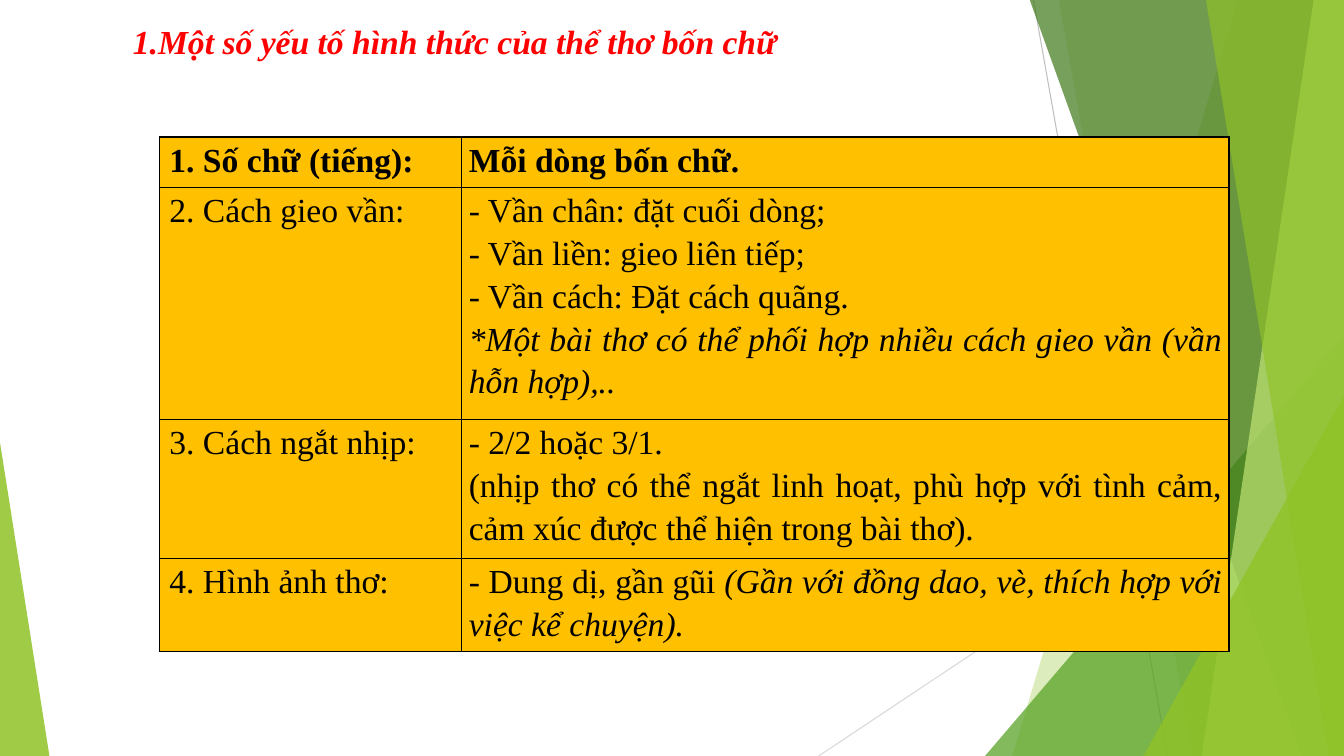
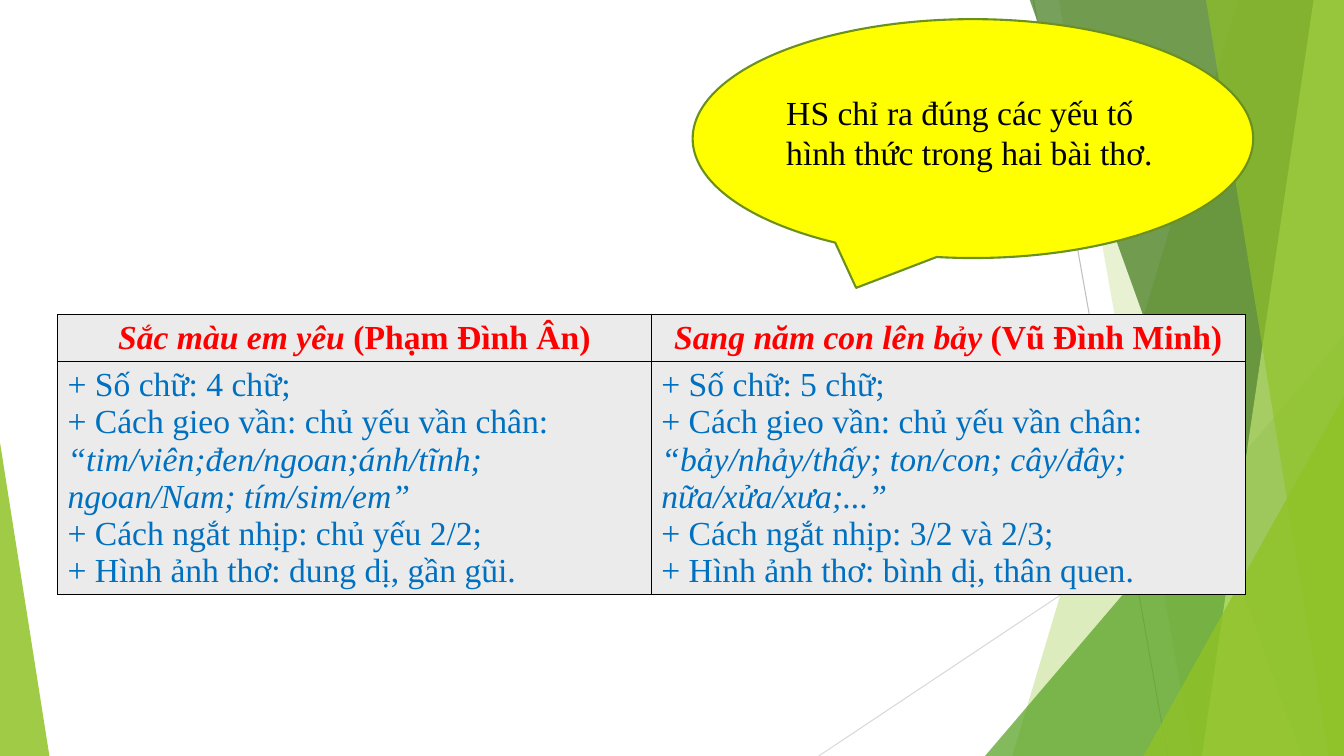
from lxml import etree
from pptx import Presentation
from pptx.dml.color import RGBColor
from pptx.enum.shapes import MSO_CONNECTOR, MSO_SHAPE
from pptx.enum.text import PP_ALIGN
from pptx.oxml import parse_xml
from pptx.oxml.ns import nsdecls, qn
from pptx.util import Inches, Pt

LINE = MSO_CONNECTOR.STRAIGHT
TRIANGLE = MSO_SHAPE.RIGHT_TRIANGLE
TRIANGLE = MSO_SHAPE.ISOSCELES_TRIANGLE
BUBBLE = MSO_SHAPE.OVAL_CALLOUT
LEFT, CENTER, JUSTIFY = PP_ALIGN.LEFT, PP_ALIGN.CENTER, PP_ALIGN.JUSTIFY

FONT = "Times New Roman"
BLACK = RGBColor(0x00, 0x00, 0x00)
RED = RGBColor(0xFF, 0x00, 0x00)
BLUE = RGBColor(0x00, 0x70, 0xC0)
GOLD = RGBColor(0xFF, 0xC0, 0x00)
SILVER = RGBColor(0xEB, 0xEB, 0xEB)
YELLOW = RGBColor(0xFF, 0xFF, 0x00)
OLIVE = RGBColor(0x6B, 0x90, 0x1C)
LIME = RGBColor(0x90, 0xC2, 0x26)
GREEN = RGBColor(0x54, 0xA0, 0x21)
FOREST = RGBColor(0x3F, 0x78, 0x19)
PALE = RGBColor(0xC0, 0xE4, 0x74)
GREY = RGBColor(0xBF, 0xBF, 0xBF)
MIST = RGBColor(0xD9, 0xD9, 0xD9)

WIDE, HIGH, TOP = 13.33, 7.5, -0.01

RAYS = [(10.25, 0, 11.58, HIGH, GREY), (WIDE, 4.03, 8.12, HIGH, MIST)]
PANES = [
    ((12.28, 10.04), LIME, 30),
    ((10.5, 11.83), LIME, 20),
    ((9.77, 3.33, 3.56, 1), GREEN, 72),
    ((10.21, 12.91), FOREST, 70),
    ((13.03, 11.92), PALE, 70),
    ((11.96, 13.18), LIME, 65),
    ((11.34, 3.93, 1.99, 1), LIME, 80),
    ((0, 4.39, 0.49, 0), LIME, 85),
]


def write(frame, text, color=BLACK, bold=False, align=LEFT, space=None):
    frame.word_wrap = True
    for i, line in enumerate(text.split("\n")):
        para = frame.paragraphs[0] if i == 0 else frame.add_paragraph()
        para.alignment = align
        para.line_spacing = space
        for j, part in enumerate(line.split("|")):
            if part:
                run = para.add_run()
                run.text = part
                font = run.font
                font.name, font.size = FONT, Pt(24)
                font.bold, font.italic = bold, j % 2 == 1
                font.color.rgb = color


def add_grid(slide, left, top, cols, rows, fill):
    table = slide.shapes.add_table(
        len(rows), len(cols), Inches(left), Inches(top),
        Inches(sum(cols)), Inches(sum(rows))).table
    table.first_row = table.horz_banding = False
    for col, width in zip(table.columns, cols):
        col.width = Inches(width)
    for row, height in zip(table.rows, rows):
        row.height = Inches(height)
    for cell in table.iter_cells():
        props = cell._tc.get_or_add_tcPr()
        for side in "LRTB":
            props.append(parse_xml(
                f'<a:ln{side} {nsdecls("a")} w="12700"><a:solidFill>'
                f'<a:srgbClr val="{BLACK}"/></a:solidFill></a:ln{side}>'))
        cell.fill.solid()
        cell.fill.fore_color.rgb = fill
    return table


deck = Presentation()
deck.slide_width, deck.slide_height = Inches(WIDE), Inches(HIGH)
form, pair = [deck.slides.add_slide(deck.slide_layouts[6]) for _ in range(2)]

for slide in (form, pair):
    shapes = slide.shapes
    for x1, y1, x2, y2, color in RAYS:
        ray = shapes.add_connector(
            LINE, Inches(x1), Inches(y1), Inches(x2), Inches(y2))
        ray.line.color.rgb = color
        ray.line.width = Pt(0.75)
        etree.SubElement(ray._element.spPr, qn("a:effectLst"))
    for place, color, alpha in PANES:
        if len(place) == 2:
            head, foot = place
            path = shapes.build_freeform(Inches(head), Inches(TOP))
            path.add_line_segments(
                [(Inches(x), Inches(y)) for x, y in
                 [(WIDE, TOP), (WIDE, HIGH), (foot, HIGH)]])
            pane = path.convert_to_shape()
        else:
            left, top, width, tip = place
            pane = shapes.add_shape(
                TRIANGLE, Inches(left), Inches(top),
                Inches(width), Inches(HIGH - top))
            pane.adjustments[0] = tip
        pane.shadow.inherit = False
        pane.line.fill.background()
        pane.fill.solid()
        pane.fill.fore_color.rgb = color
        tint = pane._element.spPr.find(qn("a:solidFill"))[0]
        etree.SubElement(tint, qn("a:alpha"), val=str(alpha * 1000))

title = form.shapes.add_textbox(
    Inches(1.22), Inches(0.16), Inches(8.23), Inches(0.5))
write(title.text_frame, "|1.Một số yếu tố hình thức của thể thơ bốn chữ|",
      color=RED, bold=True)

TRAITS = [
    ("1. Số chữ (tiếng):", "Mỗi dòng bốn chữ."),
    ("2. Cách gieo vần:",
     "- Vần chân: đặt cuối dòng;\n"
     "- Vần liền: gieo liên tiếp;\n"
     "- Vần cách: Đặt cách quãng.\n"
     "|*Một bài thơ có thể phối hợp nhiều cách gieo vần (vần hỗn hợp),..|"),
    ("3. Cách ngắt nhịp:",
     "- 2/2 hoặc 3/1.\n"
     "(nhịp thơ có thể ngắt linh hoạt, phù hợp với tình cảm, "
     "cảm xúc được thể hiện trong bài thơ)."),
    ("4. Hình ảnh thơ:",
     "- Dung dị, gần gũi |(Gần với đồng dao, vè, thích hợp với "
     "việc kể chuyện).|"),
]
grid = add_grid(form, 1.58, 1.36, [3, 7.61], [0.5, 2.3, 1.38, 0.92], GOLD)
for i, (name, note) in enumerate(TRAITS):
    write(grid.cell(i, 0).text_frame, name, bold=i == 0)
    cell = grid.cell(i, 1)
    cell.margin_left = cell.margin_right = Inches(0.07)
    cell.margin_top = cell.margin_bottom = 0
    write(cell.text_frame, note, bold=i == 0,
          align=JUSTIFY if i else LEFT, space=1.15)

POEMS = [
    ("|Sắc màu em yêu| (Phạm Đình Ân)",
     "+ Số chữ: 4 chữ;\n"
     "+ Cách gieo vần: chủ yếu vần chân: "
     "|“tim/viên;đen/ngoan;ánh/tĩnh; ngoan/Nam; tím/sim/em”|\n"
     "+ Cách ngắt nhịp: chủ yếu 2/2;\n"
     "+ Hình ảnh thơ: dung dị, gần gũi."),
    ("|Sang năm con lên bảy| (Vũ Đình Minh)",
     "+ Số chữ: 5 chữ;\n"
     "+ Cách gieo vần: chủ yếu vần chân: "
     "|“bảy/nhảy/thấy; ton/con; cây/đây; nữa/xửa/xưa;...”|\n"
     "+ Cách ngắt nhịp: 3/2 và 2/3;\n"
     "+ Hình ảnh thơ: bình dị, thân quen."),
]
grid = add_grid(pair, 0.57, 3.12, [5.89, 5.89], [0.47, 2.31], SILVER)
for i, (name, note) in enumerate(POEMS):
    write(grid.cell(0, i).text_frame, name, color=RED, bold=True, align=CENTER)
    write(grid.cell(1, i).text_frame, note, color=BLUE)

bubble = pair.shapes.add_shape(
    BUBBLE, Inches(6.87), Inches(0.19), Inches(5.56), Inches(2.37))
bubble.shadow.inherit = False
bubble.fill.solid()
bubble.fill.fore_color.rgb = YELLOW
bubble.line.color.rgb = OLIVE
bubble.line.width = Pt(1.5)
label = pair.shapes.add_textbox(
    Inches(7.7), Inches(0.86), Inches(4.06), Inches(0.91))
write(label.text_frame,
      "HS chỉ ra đúng các yếu tố hình thức trong hai bài thơ.")

deck.save("out.pptx")
